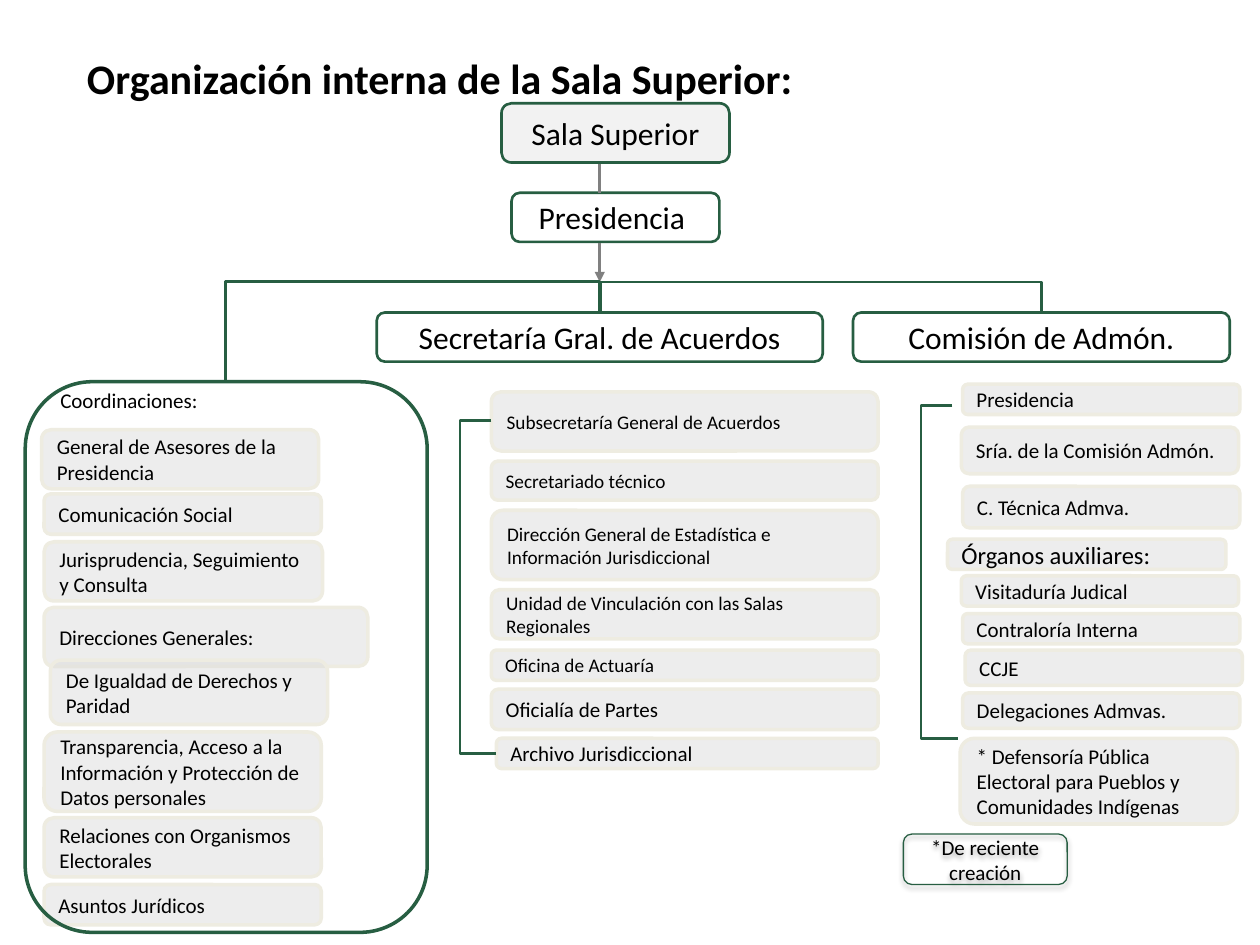
"""Organisation chart of the Sala Superior, with its three branches."""
from lxml import etree
from pptx import Presentation
from pptx.dml.color import RGBColor
from pptx.enum.shapes import MSO_CONNECTOR as Link, MSO_SHAPE as Shape
from pptx.enum.text import MSO_ANCHOR as Anchor, MSO_AUTO_SIZE as AutoSize, PP_ALIGN as Align
from pptx.oxml import parse_xml
from pptx.oxml.ns import nsdecls, qn
from pptx.util import Inches, Pt

GREEN = RGBColor(0x27, 0x5E, 0x42)
GRAY = RGBColor(0x80, 0x80, 0x80)
PALE = RGBColor(0xF2, 0xF2, 0xF2)
SILVER = RGBColor(0xDD, 0xDD, 0xDD)
CREAM = RGBColor(0xEE, 0xEC, 0xE1)
BLACK = RGBColor(0, 0, 0)


def write(shape, text, size=12, bold=False, align=Align.LEFT, anchor=Anchor.MIDDLE):
    frame = shape.text_frame
    frame.word_wrap = True
    frame.auto_size = AutoSize.NONE
    frame.vertical_anchor = anchor
    paragraph = frame.paragraphs[0]
    paragraph.alignment = align
    run = paragraph.add_run()
    run.text = text
    run.font.name = "Calibri"
    run.font.size = Pt(size)
    run.font.bold = bold
    run.font.color.rgb = BLACK
    return paragraph


def add_box(left, top, width, height, line=GREEN, weight=1.5, fill=None):
    box = slide.shapes.add_shape(
        Shape.ROUNDED_RECTANGLE, Inches(left), Inches(top), Inches(width), Inches(height))
    box.shadow.inherit = False
    box.line.color.rgb = line
    box.line.width = Pt(weight)
    if fill is None:
        box.fill.background()
    else:
        box.fill.solid()
        box.fill.fore_color.rgb = fill
    return box


prs = Presentation()
prs.slide_width, prs.slide_height = Inches(10), Inches(7.5)
slide = prs.slides.add_slide(prs.slide_layouts[5])

title = slide.shapes.title
title.left, title.top, title.width, title.height = map(Inches, (0.59, 0.41, 7.88, 0.47))
heading = write(title, "Organización interna de la Sala Superior:", size=24, bold=True, anchor=Anchor.TOP)
heading.line_spacing = 0.9

main_bodies = [
    ("Sala Superior", 3.98, 0.82, 1.81, 0.47, PALE),
    ("Presidencia ", 4.06, 1.53, 1.65, 0.39, None),
    ("Secretaría Gral. de Acuerdos", 2.99, 2.48, 3.54, 0.39, None),
    ("Comisión de Admón.", 6.77, 2.48, 2.99, 0.39, None),
]
for name, left, top, width, height, fill in main_bodies:
    write(add_box(left, top, width, height, fill=fill), name, size=18, align=Align.CENTER)

coordinations = [
    ("General de Asesores de la Presidencia", 0.33, 3.41, 2.2, 0.47, 12),
    ("Comunicación Social", 0.35, 3.92, 2.2, 0.32, 12),
    ("Jurisprudencia, Seguimiento y Consulta", 0.35, 4.3, 2.21, 0.47, 12),
    ("Direcciones Generales:", 0.35, 4.82, 2.57, 0.47, 12),
    ("De Igualdad de Derechos y Paridad", 0.4, 5.24, 2.2, 0.51, 12),
    ("Transparencia, Acceso a la Información y Protección de Datos personales",
     0.35, 5.81, 2.2, 0.63, 12),
    ("Relaciones con Organismos Electorales", 0.35, 6.49, 2.2, 0.47, 12),
    ("Asuntos Jurídicos", 0.35, 7.02, 2.2, 0.32, 12),
]
secretariat = [
    ("Subsecretaría General de Acuerdos", 3.9, 3.11, 3.07, 0.47, 11),
    ("Secretariado técnico", 3.9, 3.66, 3.07, 0.31, 11),
    ("Dirección General de Estadística e Información Jurisdiccional", 3.9, 4.05, 3.07, 0.55, 11),
    ("Unidad de Vinculación con las Salas Regionales", 3.9, 4.68, 3.07, 0.39, 11),
    ("Oficina de Actuaría", 3.9, 5.16, 3.07, 0.24, 11),
    ("Oficialía de Partes", 3.9, 5.47, 3.07, 0.32, 12),
    ("Archivo Jurisdiccional", 3.94, 5.86, 3.03, 0.24, 12),
]
commission = [
    ("Presidencia", 7.64, 3.05, 2.2, 0.24, 12),
    ("Sría. de la Comisión Admón.", 7.63, 3.39, 2.2, 0.37, 12),
    ("C. Técnica Admva.", 7.64, 3.86, 2.2, 0.33, 12),
    ("Órganos auxiliares:", 7.52, 4.28, 2.21, 0.24, 14),
    ("Visitaduría Judical", 7.63, 4.57, 2.2, 0.24, 12),
    ("Contraloría Interna", 7.64, 4.87, 2.2, 0.24, 12),
    ("CCJE", 7.66, 5.16, 2.2, 0.28, 12),
    ("Delegaciones Admvas.", 7.64, 5.5, 2.2, 0.28, 12),
    ("* Defensoría Pública Electoral para Pueblos y Comunidades Indígenas",
     7.62, 5.86, 2.2, 0.68, 12),
]
for name, left, top, width, height, size in coordinations + secretariat + commission:
    unit = add_box(left, top, width, height, line=CREAM, weight=2, fill=SILVER)
    color = unit.fill._xPr.find(qn("a:solidFill"))[0]
    etree.SubElement(color, qn("a:alpha"), val="50000")
    write(unit, name, size=size)

add_box(0.2, 3.03, 3.19, 4.37, weight=2)
caption = slide.shapes.add_textbox(Inches(0.38), Inches(3.03), Inches(2.52), Inches(0.3))
write(caption, "Coordinaciones:", anchor=Anchor.TOP)

note = add_box(7.17, 6.62, 1.3, 0.4, weight=0.75)
write(note, "*De reciente creación", align=Align.CENTER)
note._element.spPr.find(qn("a:effectLst")).append(parse_xml(
    f'<a:outerShdw {nsdecls("a")} blurRad="{Pt(3.1)}" dist="{Pt(1.8)}" dir="5400000" rotWithShape="0">'
    '<a:srgbClr val="000000"><a:alpha val="35000"/></a:srgbClr></a:outerShdw>'))

links = [
    (Link.STRAIGHT, 4.76, 1.3, 0, 0.23, GRAY, 0, None),
    (Link.STRAIGHT, 4.76, 1.93, 0, 0.31, GRAY, 0, None),
    (Link.ELBOW, 3, 1.27, 0.55, 2.97, GREEN, 270, 1.45),
    (Link.ELBOW, 6.51, 0.73, 0.01, 3.5, GREEN, 270, 25),
    (Link.ELBOW, 3.9, 3.34, 0.04, 2.64, GREEN, 0, -6.21),
    (Link.ELBOW, 7.56, 3.22, 0.04, 2.64, GREEN, 0, -6.21),
]
for kind, left, top, width, height, color, turn, bend in links:
    link = slide.shapes.add_connector(
        kind, Inches(left), Inches(top), Inches(left + width), Inches(top + height))
    link.line.color.rgb = color
    link.line.width = Pt(1.5)
    properties = link._element.spPr
    etree.SubElement(properties, qn("a:effectLst"))
    if turn:
        properties.find(qn("a:xfrm")).set("rot", str(turn * 60000))
    if bend is not None:
        guides = properties.find(qn("a:prstGeom")).find(qn("a:avLst"))
        etree.SubElement(guides, qn("a:gd"), name="adj1", fmla=f"val {round(bend * 100000)}")
    if top == 1.93:
        etree.SubElement(link.line._get_or_add_ln(), qn("a:tailEnd"), type="triangle")

prs.save("out.pptx")
